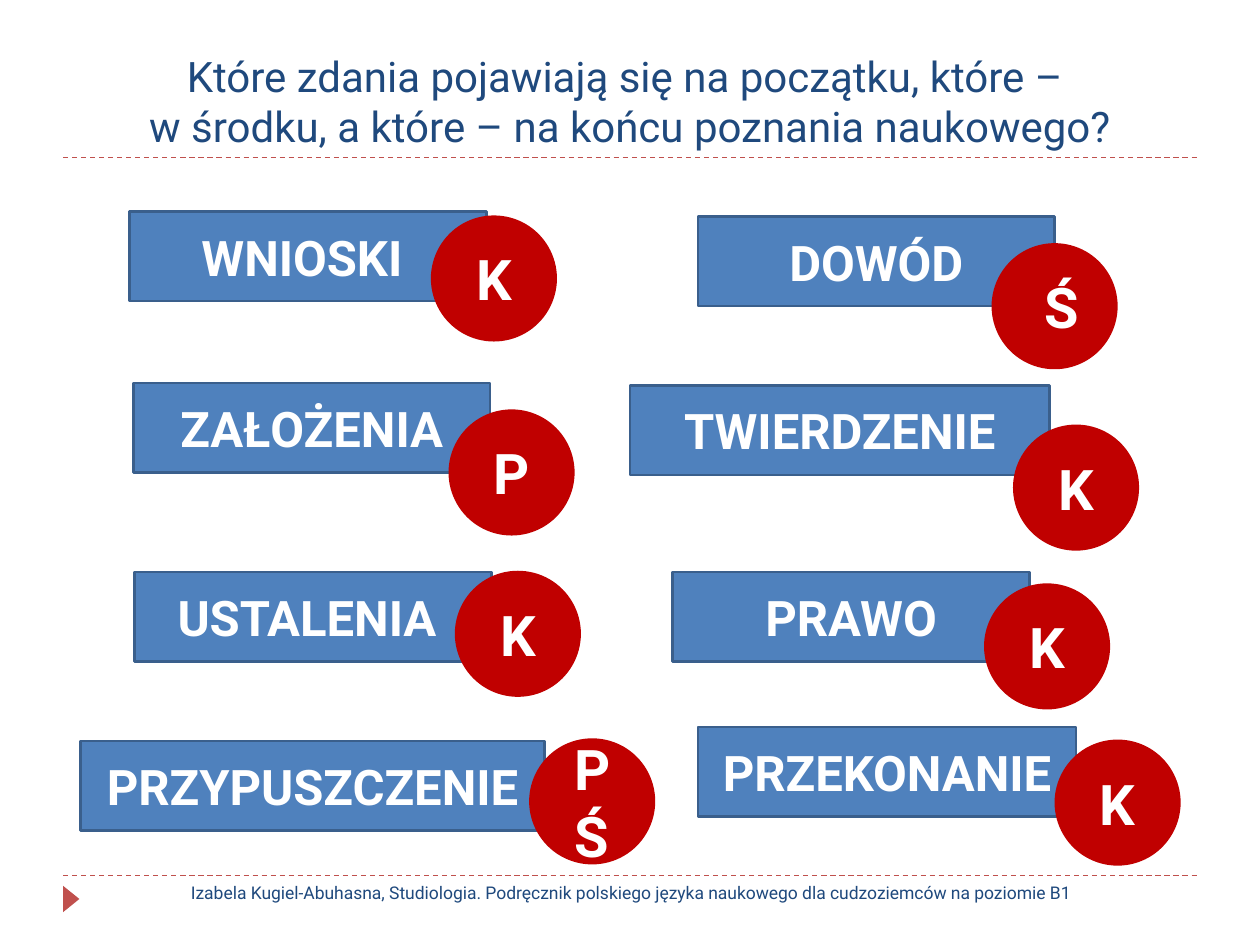
"""Build the slide that sorts terms by their stage in scientific inquiry."""
from lxml import etree
from pptx import Presentation
from pptx.dml.color import RGBColor
from pptx.enum.dml import MSO_LINE
from pptx.enum.shapes import MSO_CONNECTOR, MSO_SHAPE
from pptx.enum.text import MSO_ANCHOR, PP_ALIGN
from pptx.oxml.ns import qn
from pptx.util import Inches, Pt

RECT, OVAL, TRIANGLE = MSO_SHAPE.RECTANGLE, MSO_SHAPE.OVAL, MSO_SHAPE.ISOSCELES_TRIANGLE
STRAIGHT, DASH = MSO_CONNECTOR.STRAIGHT, MSO_LINE.DASH
TOP, MIDDLE, BOTTOM = MSO_ANCHOR.TOP, MSO_ANCHOR.MIDDLE, MSO_ANCHOR.BOTTOM
CENTER = PP_ALIGN.CENTER

FONT = "Roboto"
NAVY, BLUE, BLUE_EDGE = "1F497D", "4F81BD", "3A5F8C"
RED, ACCENT, WHITE = "C00000", "C0504D", "FFFFFF"
TERM_H, BADGE = 0.71, 0.98

TITLE = ("Które zdania pojawiają się na początku, które – \v"
         "w środku, a które – na końcu poznania naukowego?")
FOOTER = ("Izabela Kugiel-Abuhasna, Studiologia. Podręcznik polskiego języka "
          "naukowego dla cudzoziemców na poziomie B1")
RULES = [1.25, 6.95]
TERMS = [
    ("WNIOSKI ", (1.03, 1.68), 2.83, "K", (3.43, 1.72)),
    ("ZAŁOŻENIA", (1.06, 3.04), 2.83, "P", (3.57, 3.26)),
    ("USTALENIA ", (1.07, 4.54), 2.83, "K", (3.62, 4.54)),
    ("PRZYPUSZCZENIE", (0.64, 5.88), 3.68, "PŚ", (4.21, 5.87)),
    ("DOWÓD", (5.54, 1.72), 2.83, " Ś", (7.88, 1.94)),
    ("TWIERDZENIE", (5, 3.06), 3.33, "K", (8.05, 3.38)),
    ("PRAWO", (5.34, 4.54), 2.83, "K", (7.82, 4.64)),
    ("PRZEKONANIE", (5.54, 5.77), 3, "K", (8.38, 5.88)),
]


def rgb(value):
    return RGBColor.from_string(value)


def set_text(sp, text, size, color, anchor, bold=False):
    tf = sp.text_frame
    tf.word_wrap = True
    tf.vertical_anchor = anchor
    p = tf.paragraphs[0]
    p.text = text
    p.alignment = CENTER
    for r in p.runs:
        r.font.name, r.font.size, r.font.bold = FONT, Pt(size), bold
        r.font.color.rgb = rgb(color)


def add_text(s, box, text, size, anchor):
    sp = s.shapes.add_textbox(*map(Inches, box))
    set_text(sp, text, size, NAVY, anchor)


def add_shape(s, kind, box, fill, edge=None):
    sp = s.shapes.add_shape(kind, *map(Inches, box))
    sp.shadow.inherit = False
    sp.fill.solid()
    sp.fill.fore_color.rgb = rgb(fill)
    if edge:
        sp.line.color.rgb = rgb(edge)
        sp.line.width = Pt(1.5)
    else:
        sp.line.fill.background()
    return sp


def add_rule(s, y):
    line = s.shapes.add_connector(STRAIGHT, *map(Inches, (0.5, y, 9.5, y)))
    line.line.color.rgb = rgb(ACCENT)
    line.line.width = Pt(0.75)
    line.line.dash_style = DASH
    etree.SubElement(line._element.spPr, qn("a:effectLst"))


def main():
    prs = Presentation()
    prs.slide_width, prs.slide_height = Inches(10), Inches(7.5)
    s = prs.slides.add_slide(prs.slide_layouts[6])
    for y in RULES:
        add_rule(s, y)
    add_shape(s, TRIANGLE, (0.46, 7.07, 0.21, 0.13), ACCENT).rotation = 90
    add_text(s, (0.5, 0.17, 9, 1.08), TITLE, 24, BOTTOM)
    add_text(s, (0.87, 6.95, 8.27, 0.4), FOOTER, 10, TOP)
    for term, term_at, width, stage, stage_at in TERMS:
        sp = add_shape(s, RECT, (*term_at, width, TERM_H), BLUE, BLUE_EDGE)
        set_text(sp, term, 28, WHITE, MIDDLE, True)
        sp = add_shape(s, OVAL, (*stage_at, BADGE, BADGE), RED, RED)
        set_text(sp, stage, 32, WHITE, MIDDLE, True)
    prs.save("out.pptx")


if __name__ == "__main__":
    main()
